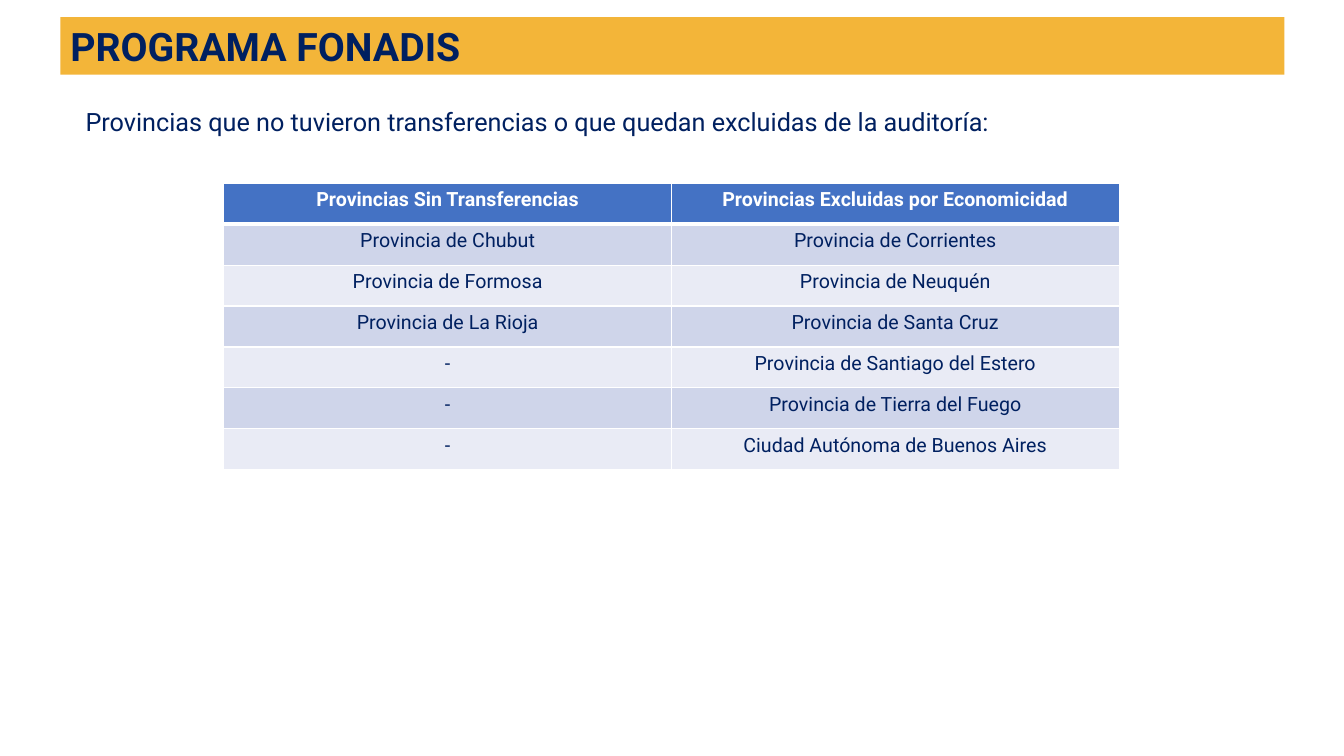
from dataclasses import dataclass

from lxml import etree
from pptx import Presentation
from pptx import util as u
from pptx.dml.color import RGBColor
from pptx.enum import shapes, text
from pptx.oxml import ns


@dataclass(frozen=True)
class Theme:
    font: str = "Roboto"
    navy: str = "002060"
    white: str = "FFFFFF"
    gold: str = "F3B539"
    header: str = "4472C4"
    bands: tuple[str, str] = ("CFD5EA", "E9EBF5")
    title_size: int = 28
    intro_size: int = 18
    table_size: int = 14


@dataclass(frozen=True)
class Box:
    left: float
    top: float
    width: float
    height: float

    def lengths(self) -> tuple:
        return tuple(map(u.Inches, (self.left, self.top, self.width, self.height)))


@dataclass(frozen=True)
class ProvinceRow:
    without_transfers: str
    excluded: str


THEME = Theme()
TITLE_BOX = Box(0.6, 0.17, 12.14, 0.57)
INTRO_BOX = Box(0.75, 1.01, 11.99, 1.62)
TABLE_BOX = Box(2.22, 1.82, 8.88, 2.84)
ROWS = [
    ProvinceRow("Provincias Sin Transferencias", "Provincias Excluidas por Economicidad"),
    ProvinceRow("Provincia de Chubut", "Provincia de Corrientes"),
    ProvinceRow("Provincia de Formosa", "Provincia de Neuquén"),
    ProvinceRow("Provincia de La Rioja", "Provincia de Santa Cruz"),
    ProvinceRow("-", "Provincia de Santiago del Estero"),
    ProvinceRow("-", "Provincia de Tierra del Fuego"),
    ProvinceRow("-", "Ciudad Autónoma de Buenos Aires"),
]


def write(tf, content: str, *, size: int, color: str = THEME.navy, bold: bool = False,
          align=text.PP_ALIGN.LEFT) -> None:
    p = tf.paragraphs[0]
    p.alignment = align
    r = p.add_run()
    r.text = content
    r.font.name = THEME.font
    r.font.size = u.Pt(size)
    r.font.bold = bold
    r.font.color.rgb = RGBColor.from_string(color)


def set_borders(cell, widths: dict[str, int]) -> None:
    """Border lines come before the fill in the cell properties."""
    tc_pr = cell._tc.get_or_add_tcPr()
    for i, (side, width) in enumerate(widths.items()):
        ln = etree.Element(ns.qn(f"a:ln{side}"), w=str(u.Pt(width)))
        fill = etree.SubElement(ln, ns.qn("a:solidFill"))
        etree.SubElement(fill, ns.qn("a:srgbClr"), val=THEME.white)
        tc_pr.insert(i, ln)


def add_title(s, content: str) -> None:
    sp = s.shapes.add_shape(shapes.MSO_SHAPE.RECTANGLE, *TITLE_BOX.lengths())
    sp.shadow.inherit = False
    sp.fill.solid()
    sp.fill.fore_color.rgb = RGBColor.from_string(THEME.gold)
    sp.line.fill.background()
    tf = sp.text_frame
    tf.word_wrap = True
    tf.vertical_anchor = text.MSO_ANCHOR.MIDDLE
    write(tf, content, size=THEME.title_size, bold=True, align=text.PP_ALIGN.JUSTIFY)


def add_intro(s, content: str) -> None:
    tf = s.shapes.add_textbox(*INTRO_BOX.lengths()).text_frame
    tf.word_wrap = True
    write(tf, content, size=THEME.intro_size)


def add_province_table(s, rows: list[ProvinceRow]) -> None:
    table = s.shapes.add_table(len(rows), 2, *TABLE_BOX.lengths()).table
    for i, row in enumerate(rows):
        is_header = i == 0
        fill = THEME.header if is_header else THEME.bands[(i - 1) % 2]
        borders = {"L": 1, "R": 1, "T": 3 if i == 1 else 1, "B": 3 if is_header else 1}
        for j, content in enumerate((row.without_transfers, row.excluded)):
            cell = table.cell(i, j)
            cell.fill.solid()
            cell.fill.fore_color.rgb = RGBColor.from_string(fill)
            set_borders(cell, borders)
            write(cell.text_frame, content, size=THEME.table_size, bold=is_header,
                  color=THEME.white if is_header else THEME.navy,
                  align=text.PP_ALIGN.CENTER)


def main() -> None:
    prs = Presentation()
    prs.slide_width, prs.slide_height = u.Inches(13.33), u.Inches(7.5)
    s = prs.slides.add_slide(prs.slide_layouts[6])

    # Heading band and introduction
    add_title(s, "PROGRAMA FONADIS")
    add_intro(s, "Provincias que no tuvieron transferencias o que quedan excluidas de la auditoría:")

    # Provinces by reason
    add_province_table(s, ROWS)

    prs.save("out.pptx")


if __name__ == "__main__":
    main()
